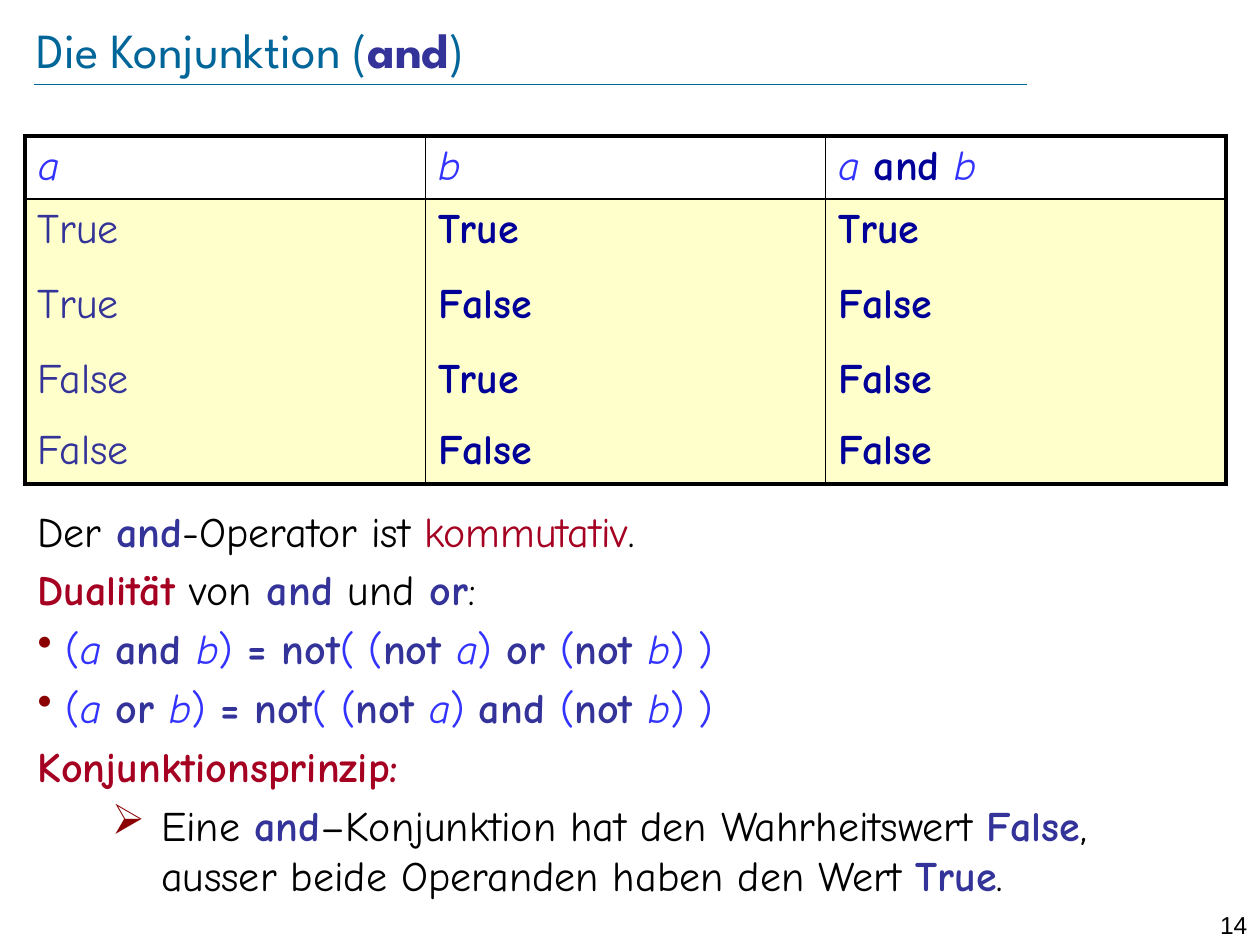
from pptx import Presentation
from pptx.dml.color import RGBColor
from pptx.enum.shapes import MSO_CONNECTOR
from pptx.enum.text import MSO_ANCHOR, PP_ALIGN
from pptx.oxml.ns import qn
from pptx.util import Inches, Pt
from lxml.etree import SubElement

BLACK = RGBColor(0x00, 0x00, 0x00)
TEAL = RGBColor(0x00, 0x66, 0x99)
INDIGO = RGBColor(0x33, 0x33, 0x99)
BLUE = RGBColor(0x33, 0x33, 0xFF)
NAVY = RGBColor(0x00, 0x00, 0x99)
CRIMSON = RGBColor(0xA5, 0x00, 0x21)
DARK_RED = RGBColor(0x8B, 0x00, 0x00)
CREAM = RGBColor(0xFF, 0xFF, 0xCC)

BODY_FONT = "Comic Neue"
TITLE_FONT = "League Spartan"

STYLES = {
    "title": (TEAL, False, False),
    "text": (BLACK, False, False),
    "key": (INDIGO, True, False),
    "plain": (INDIGO, False, False),
    "value": (NAVY, True, False),
    "var": (BLUE, False, True),
    "paren": (BLUE, False, False),
    "term": (CRIMSON, False, False),
    "strong": (CRIMSON, True, False),
}


def add_runs(p, runs, font=BODY_FONT, size=24):
    for text, style in runs:
        r = p.add_run()
        r.text = text
        r.font.name = font
        r.font.size = Pt(size)
        r.font.color.rgb, r.font.bold, r.font.italic = STYLES[style]


def add_bullet(p, char, left, hanging):
    pPr = p._p.get_or_add_pPr()
    pPr.set("marL", str(Inches(left)))
    pPr.set("indent", str(-Inches(hanging)))
    color = SubElement(pPr, qn("a:buClr"))
    SubElement(color, qn("a:srgbClr"), val=str(DARK_RED))
    SubElement(pPr, qn("a:buChar"), char=char)


def add_box(s, left, top, width, height):
    sp = s.shapes.add_textbox(Inches(left), Inches(top), Inches(width), Inches(height))
    tf = sp.text_frame
    tf.word_wrap = True
    return tf


def add_title(s, left, top, width, height):
    tf = add_box(s, left, top, width, height)
    tf.margin_left = tf.margin_right = tf.margin_top = tf.margin_bottom = 0
    tf.vertical_anchor = MSO_ANCHOR.MIDDLE
    runs = [("Die Konjunktion (", "title"), ("and", "key"), (")", "title")]
    add_runs(tf.paragraphs[0], runs, TITLE_FONT, 28)


def add_rule(s, left, top, width):
    line = s.shapes.add_connector(
        MSO_CONNECTOR.STRAIGHT, Inches(left), Inches(top), Inches(left + width), Inches(top))
    line.line.color.rgb = TEAL
    line.line.width = Pt(0.25)
    SubElement(line._element.spPr, qn("a:effectLst"))


def set_borders(cell, widths):
    tcPr = cell._tc.get_or_add_tcPr()
    for i, (side, width) in enumerate(widths.items()):
        ln = tcPr.makeelement(qn(f"a:ln{side}"), {"w": str(Pt(width))})
        if width:
            fill = SubElement(ln, qn("a:solidFill"))
            SubElement(fill, qn("a:srgbClr"), val=str(BLACK))
        else:
            SubElement(ln, qn("a:noFill"))
        tcPr.insert(i, ln)


def add_truth_table(s, left, top, width):
    header = [[("a", "var")], [("b", "var")],
              [("a ", "var"), ("and", "value"), (" b", "var")]]
    rows = [header]
    for a in (True, False):
        for b in (True, False):
            rows.append([[(str(a), "plain")], [(str(b), "value")], [(str(a and b), "value")]])
    heights = [0.48, 0.6, 0.59, 0.57, 0.48]
    last_row, last_col = len(rows) - 1, len(header) - 1
    table = s.shapes.add_table(
        len(rows), len(header), Inches(left), Inches(top), Inches(width),
        Inches(sum(heights))).table
    table.first_row = table.horz_banding = False
    for i, row in enumerate(rows):
        table.rows[i].height = Inches(heights[i])
        for j, runs in enumerate(row):
            cell = table.cell(i, j)
            if i == 0:
                cell.fill.background()
            else:
                cell.fill.solid()
                cell.fill.fore_color.rgb = CREAM
            add_runs(cell.text_frame.paragraphs[0], runs)
            set_borders(cell, {
                "L": 2.25 if j == 0 else 1,
                "R": 2.25 if j == last_col else 1,
                "T": {0: 2.25, 1: 1}.get(i, 0),
                "B": {0: 1, last_row: 2.25}.get(i, 0),
            })


def duality(inner, outer):
    return [("(", "paren"), ("a ", "var"), (f"{inner} ", "key"), ("b", "var"),
            (") ", "paren"), ("= not", "key"), ("( (", "paren"), ("not ", "key"),
            ("a", "var"), (") ", "paren"), (f"{outer} ", "key"), ("(", "paren"),
            ("not ", "key"), ("b", "var"), (") )", "paren")]


def add_body(s, left, top, width, height):
    dot = ("•", 0.22, 0.22)
    arrow = ("➢", 0.98, 0.39)
    paragraphs = [
        (None, [("Der", "text"), (" and", "key"), ("-Operator ist ", "text"),
                ("kommutativ", "term"), (".", "text")]),
        (None, [("Dualität ", "strong"), ("von", "text"), (" and ", "key"),
                ("und", "text"), (" or", "key"), (":", "text")]),
        (dot, duality("and", "or")),
        (dot, duality("or", "and")),
        (None, [("Konjunktionsprinzip:", "strong")]),
        (arrow, [("Eine ", "text"), ("and", "key"),
                 ("–Konjunktion hat den Wahrheitswert ", "text"), ("False", "key"),
                 (", ausser beide Operanden haben den Wert ", "text"),
                 ("True", "key"), (".", "text")]),
    ]
    tf = add_box(s, left, top, width, height)
    tf.margin_right = Inches(0.2)
    for i, (bullet, runs) in enumerate(paragraphs):
        p = tf.add_paragraph() if i else tf.paragraphs[0]
        if i:
            p.space_before = Pt(4.8)
        if bullet:
            add_bullet(p, *bullet)
        add_runs(p, runs)


def add_page_number(s, left, top, width, height):
    tf = add_box(s, left, top, width, height)
    tf.margin_left = tf.margin_right = tf.margin_top = tf.margin_bottom = 0
    p = tf.paragraphs[0]
    p.alignment = PP_ALIGN.RIGHT
    add_runs(p, [("14", "text")], "Arial", 14)


def main():
    prs = Presentation()
    prs.slide_width, prs.slide_height = Inches(10), Inches(7.5)
    s = prs.slides.add_slide(prs.slide_layouts[6])
    add_rule(s, 0.27, 0.67, 7.88)
    add_page_number(s, 9.35, 7.22, 0.55, 0.24)
    add_title(s, 0.29, 0.13, 8.96, 0.51)
    add_body(s, 0.2, 3.96, 9.53, 2.71)
    add_truth_table(s, 0.2, 1.08, 9.53)
    prs.save("out.pptx")


if __name__ == "__main__":
    main()
